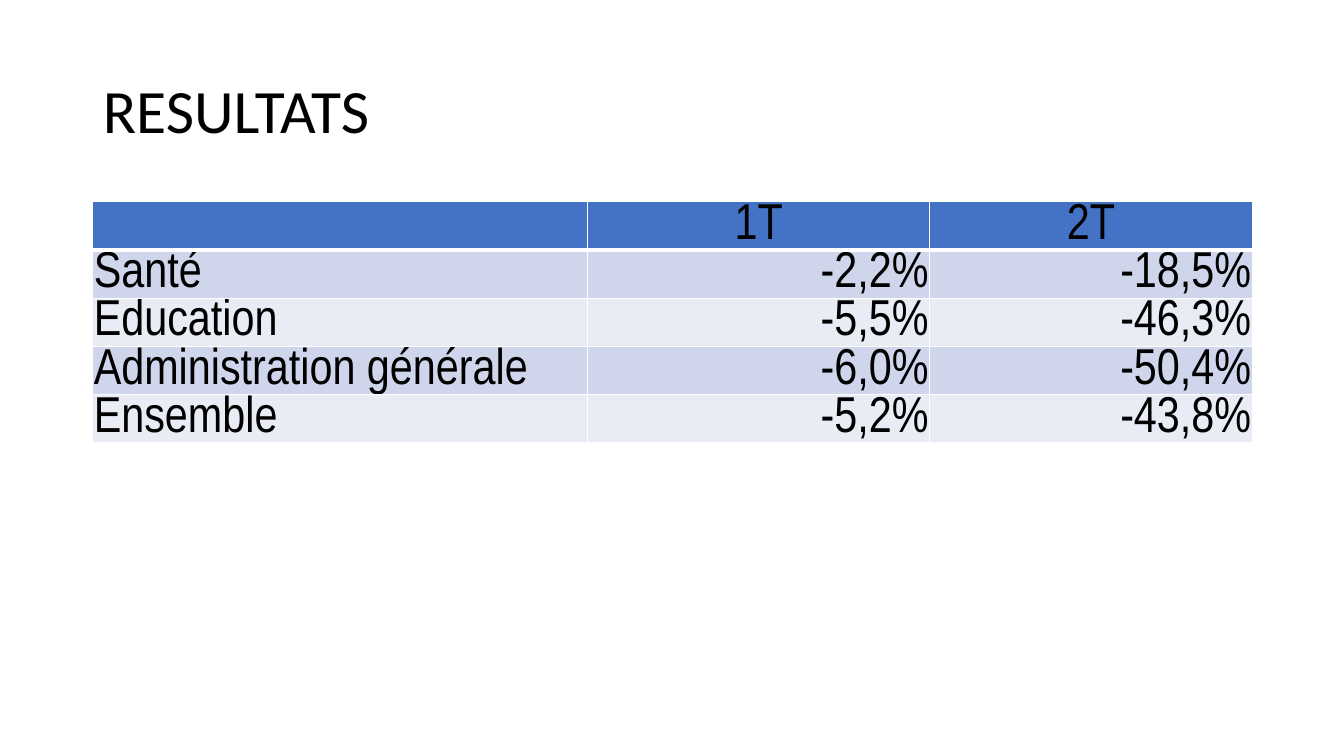
from lxml.etree import SubElement
from pptx import Presentation
from pptx.dml.color import RGBColor
from pptx.enum.text import MSO_ANCHOR, PP_ALIGN
from pptx.oxml.ns import qn
from pptx.util import Inches, Pt

THEME = {
    "text": RGBColor.from_string("000000"),
    "header": RGBColor.from_string("4472C4"),
    "bands": [RGBColor.from_string("E9EBF5"), RGBColor.from_string("CFD5EA")],
    "border": "FFFFFF",
    "title": {"name": "Calibri", "size": Pt(44), "bold": False},
    "table": {"name": "Arial Narrow", "size": Pt(36), "bold": False},
}
RESULTS = [
    ["", "1T", "2T"],
    ["Santé", "-2,2%", "-18,5%"],
    ["Education", "-5,5%", "-46,3%"],
    ["Administration générale", "-6,0%", "-50,4%"],
    ["Ensemble", "-5,2%", "-43,8%"],
]
COLUMN_WIDTHS = [4.91, 3.39, 3.2]
ROW_HEIGHT = 0.41
LEFT, WIDTH = Inches(0.92), Inches(sum(COLUMN_WIDTHS))
CELL_FORMAT = {
    "vertical_anchor": MSO_ANCHOR.BOTTOM,
    "margin_left": Inches(0.01),
    "margin_right": Inches(0.01),
    "margin_top": Inches(0.01),
    "margin_bottom": 0,
}


def apply_format(target, values):
    for name, value in values.items():
        setattr(target, name, value)


def add_border(cell, side, points):
    line = SubElement(cell._tc.get_or_add_tcPr(), qn(f"a:ln{side}"), w=str(Pt(points)))
    fill = SubElement(line, qn("a:solidFill"))
    SubElement(fill, qn("a:srgbClr"), val=THEME["border"])


deck = Presentation()
apply_format(deck, {"slide_width": Inches(13.33), "slide_height": Inches(7.5)})
page = deck.slides.add_slide(deck.slide_layouts[5])

title = page.shapes.title
apply_format(title, {"left": LEFT, "top": Inches(0.4), "width": WIDTH, "height": Inches(1.45)})
title.text_frame.text = "RESULTATS"
title.text_frame.vertical_anchor = MSO_ANCHOR.MIDDLE
para = title.text_frame.paragraphs[0]
apply_format(para, {"alignment": PP_ALIGN.LEFT, "line_spacing": 0.9})
apply_format(para.runs[0].font, THEME["title"])
para.runs[0].font.color.rgb = THEME["text"]

table = page.shapes.add_table(
    len(RESULTS), len(COLUMN_WIDTHS), LEFT, Inches(2), WIDTH, Inches(ROW_HEIGHT * len(RESULTS))
).table
for column, width in zip(table.columns, COLUMN_WIDTHS):
    column.width = Inches(width)

for row_index, values in enumerate(RESULTS):
    is_header = row_index == 0
    for column_index, value in enumerate(values):
        cell = table.cell(row_index, column_index)
        apply_format(cell, CELL_FORMAT)
        for side in "LRTB":
            under_header = (side == "B" and is_header) or (side == "T" and row_index == 1)
            add_border(cell, side, 3 if under_header else 1)
        cell.fill.solid()
        cell.fill.fore_color.rgb = THEME["header"] if is_header else THEME["bands"][row_index % 2]
        para = cell.text_frame.paragraphs[0]
        if is_header:
            para.alignment = PP_ALIGN.CENTER
        else:
            para.alignment = PP_ALIGN.RIGHT if column_index else PP_ALIGN.LEFT
        if value:
            span = para.add_run()
            span.text = value
            apply_format(span.font, THEME["table"])
            span.font.color.rgb = THEME["text"]

deck.save("out.pptx")
